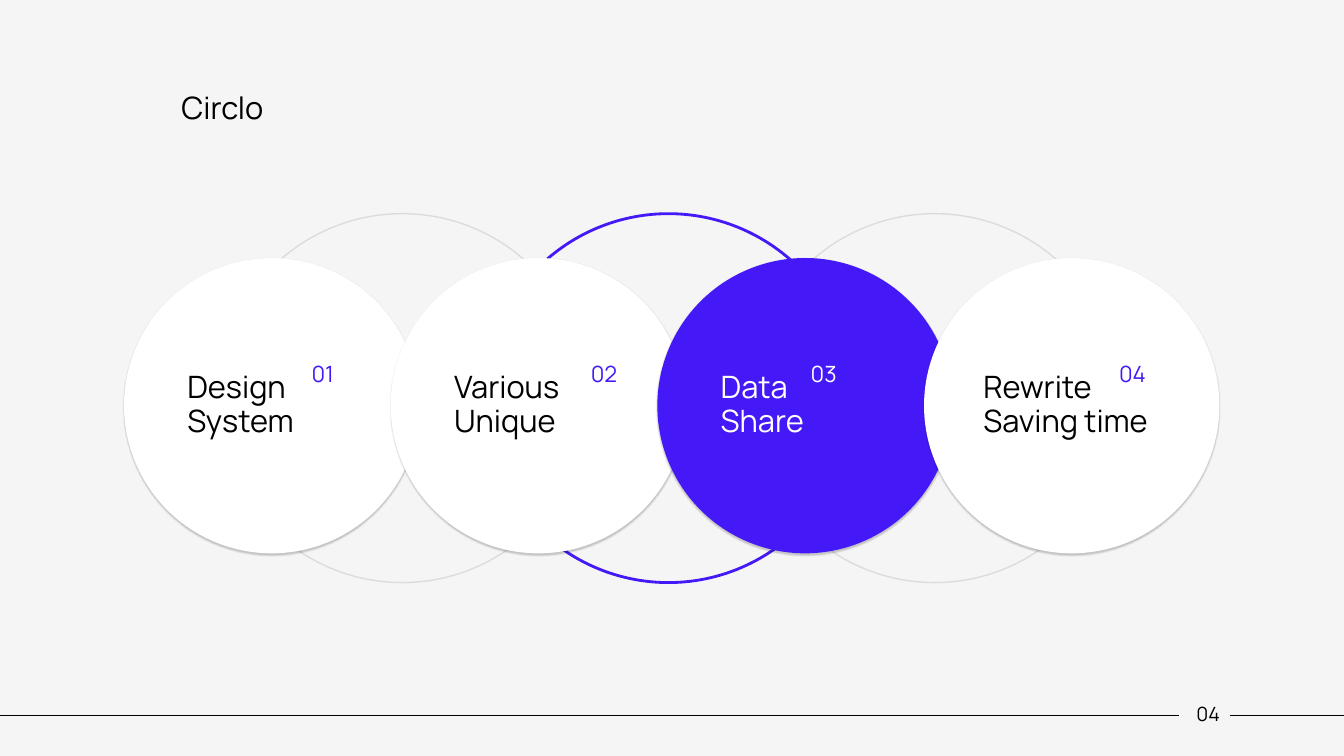
from dataclasses import dataclass

from lxml import etree
from pptx import Presentation
from pptx.dml.color import RGBColor
from pptx.enum.shapes import MSO_CONNECTOR, MSO_SHAPE
from pptx.enum.text import MSO_ANCHOR, MSO_AUTO_SIZE, PP_ALIGN
from pptx.oxml import parse_xml
from pptx.oxml.ns import nsdecls, qn
from pptx.util import Inches, Pt

ELLIPSE = MSO_SHAPE.OVAL
STRAIGHT = MSO_CONNECTOR.STRAIGHT
TOP, MIDDLE = MSO_ANCHOR.TOP, MSO_ANCHOR.MIDDLE
LEFT, RIGHT = PP_ALIGN.LEFT, PP_ALIGN.RIGHT
FIT_SHAPE, FIXED = MSO_AUTO_SIZE.SHAPE_TO_FIT_TEXT, MSO_AUTO_SIZE.NONE


@dataclass(frozen=True)
class Theme:
    font: str = "Manrope"
    background: RGBColor = RGBColor(0xF5, 0xF5, 0xF5)
    accent: RGBColor = RGBColor(0x45, 0x19, 0xF7)
    ring: RGBColor = RGBColor(0xDC, 0xDC, 0xDC)
    white: RGBColor = RGBColor(0xFF, 0xFF, 0xFF)
    black: RGBColor = RGBColor(0, 0, 0)
    heading: Pt = Pt(22)
    number: Pt = Pt(16)
    page: Pt = Pt(14)


theme = Theme()


def write(shape, text, size, color, margins, anchor=TOP, align=LEFT, wrap=True, fit=FIXED):
    frame = shape.text_frame
    frame.text = text
    frame.word_wrap = wrap
    frame.auto_size = fit
    frame.vertical_anchor = anchor
    frame.margin_left, frame.margin_top, frame.margin_right, frame.margin_bottom = map(Inches, margins)
    for paragraph in frame.paragraphs:
        paragraph.alignment = align
        paragraph.line_spacing = 0.9
        for run in paragraph.runs:
            run.font.name = theme.font
            run.font.size = size
            run.font.color.rgb = color


presentation = Presentation()
presentation.slide_width = Inches(13.33)
presentation.slide_height = Inches(7.5)
slide = presentation.slides.add_slide(presentation.slide_layouts[5])
slide.background.fill.solid()
slide.background.fill.fore_color.rgb = theme.background

title = slide.shapes.title
title.left, title.top, title.width, title.height = map(Inches, (1.7, 0.87, 1.13, 0.47))
write(title, "Circlo", theme.heading, theme.black, (0.1, 0.05, 0.1, 0.05), wrap=False, fit=FIT_SHAPE)

for start, end in ((0, 11.69), (12.2, 13.33)):
    rule = slide.shapes.add_connector(STRAIGHT, Inches(start), Inches(7.1), Inches(end), Inches(7.1))
    rule.line.color.rgb = theme.black
    rule.line.width = Pt(0.5)
    etree.SubElement(rule._element.spPr, qn("a:effectLst"))

for index, (color, width) in enumerate(((theme.ring, 1), (theme.accent, 2), (theme.ring, 1))):
    ring = slide.shapes.add_shape(
        ELLIPSE, Inches(2.16 + 2.64 * index), Inches(2.12), Inches(3.66), Inches(3.66))
    ring.shadow.inherit = False
    ring.fill.background()
    ring.line.color.rgb = color
    ring.line.width = Pt(width)

page_number = slide.shapes.add_textbox(Inches(11.66), Inches(6.9), Inches(0.44), Inches(0.4))
write(page_number, "04", theme.page, theme.black, (0, 0, 0, 0), MIDDLE, RIGHT)

wide, narrow = (0.2, 0.05, 0.1, 0.05), (0.16, 0.05, 0, 0.05)
steps = (
    ("Design\nSystem", 3.09, 0.23, theme.white, theme.black, theme.accent, wide),
    ("Various\nUnique", 5.86, 0.27, theme.white, theme.black, theme.accent, wide),
    ("Data\nShare", 8.04, 0.28, theme.accent, theme.white, theme.white, wide),
    ("Rewrite\nSaving time", 11.1, 0.3, theme.white, theme.black, theme.accent, narrow),
)
for index, (label, number_left, number_width, fill, text_color, number_color, margins) in enumerate(steps):
    group = slide.shapes.add_group_shape()
    circle = group.shapes.add_shape(
        ELLIPSE, Inches(1.23 + 2.645 * index), Inches(2.56), Inches(2.93), Inches(2.93))
    circle.fill.solid()
    circle.fill.fore_color.rgb = fill
    circle.line.fill.background()
    circle._element.spPr.append(parse_xml(
        f'<a:effectLst {nsdecls("a")}>'
        f'<a:outerShdw blurRad="{Pt(1)}" dist="{Pt(1)}" dir="5400000" algn="t" rotWithShape="0">'
        '<a:srgbClr val="000000"><a:alpha val="20000"/></a:srgbClr>'
        '</a:outerShdw></a:effectLst>'))
    write(circle, label, theme.heading, text_color, margins, MIDDLE)
    number = group.shapes.add_textbox(
        Inches(number_left), Inches(3.6), Inches(number_width), Inches(0.27))
    write(number, f"{index + 1:02}", theme.number, number_color, (0, 0, 0, 0), wrap=False, fit=FIT_SHAPE)

presentation.save("out.pptx")
